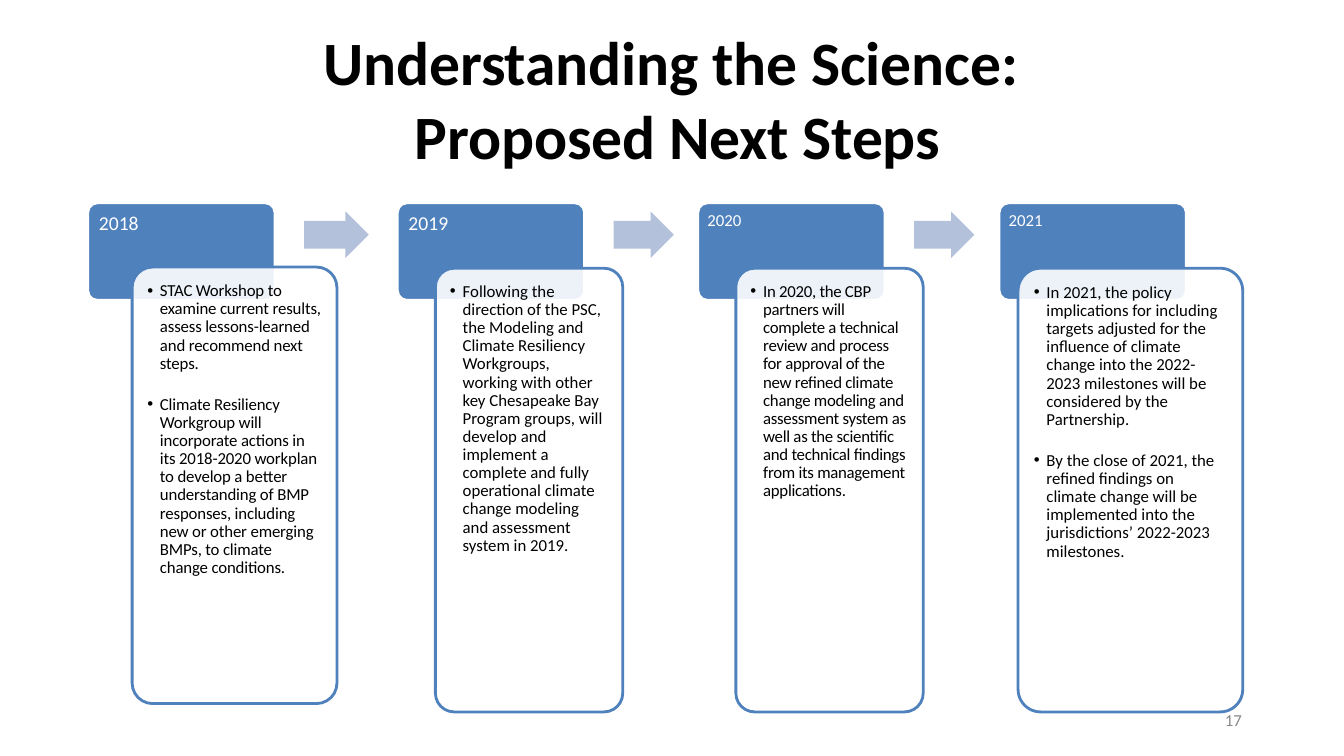
import pptx
import pptx.util
import pptx.dml.color
import pptx.enum.shapes
import pptx.enum.text
import pptx.oxml.ns
import lxml.etree

Cm, Pt = pptx.util.Cm, pptx.util.Pt
SHAPE = pptx.enum.shapes.MSO_SHAPE
ALIGN = pptx.enum.text.PP_ALIGN
ANCHOR = pptx.enum.text.MSO_ANCHOR
qn = pptx.oxml.ns.qn

FONT = "Calibri"
COLORS = {"blue": "4F81BD", "arrow": "B3C1DB", "white": "FFFFFF",
          "black": "000000", "grey": "888888"}

# Per step: year, year size, left, card offset, card top, card width,
# card height, arrow width (0 for none), letter spacing, bullets
STEPS = [
    ("2018", 14, 2.21, 1.12, 6.73, 5.16, 11, 1.63, -0.1, [
        "STAC Workshop to examine current results, assess lessons-learned "
        "and recommend next steps.",
        "Climate Resiliency Workgroup will incorporate actions in its "
        "2018-2020 workplan to develop a better understanding of BMP "
        "responses, including new or other emerging BMPs, to climate "
        "change conditions."]),
    ("2019", 14, 10.01, 0.96, 6.76, 4.72, 11.18, 1.52, 0, [
        "Following the direction of the PSC, the Modeling and Climate "
        "Resiliency Workgroups, working with other key Chesapeake Bay "
        "Program groups, will develop and implement a complete and fully "
        "operational climate change modeling and assessment system in 2019."]),
    ("2020", 12, 17.58, 0.96, 6.76, 4.72, 11.18, 1.52, -0.2, [
        "In 2020, the CBP partners will complete a technical review and "
        "process for approval of the new refined climate change modeling "
        "and assessment system as well as the scientific and technical "
        "findings from its management applications."]),
    ("2021", 12, 25.17, 0.48, 6.76, 5.66, 11.18, 0, 0, [
        "In 2021, the policy implications for including targets adjusted "
        "for the influence of climate change into the 2022-2023 milestones "
        "will be considered by the Partnership.",
        "By the close of 2021, the refined findings on climate change will "
        "be implemented into the jurisdictions’ 2022-2023 milestones."]),
]


def rgb(name):
    return pptx.dml.color.RGBColor.from_string(COLORS[name])


def format_runs(p, size, color, bold=False, spacing=0):
    for r in p.runs:
        r.font.name, r.font.size, r.font.bold = FONT, Pt(size), bold
        r.font.color.rgb = rgb(color)
        r._r.get_or_add_rPr().set("spc", str(round(spacing * 100)))


def set_frame(tf, left=0, top=0, right=0, bottom=0):
    tf.word_wrap = True
    tf.auto_size = pptx.enum.text.MSO_AUTO_SIZE.NONE
    tf.vertical_anchor = ANCHOR.TOP
    tf.margin_left, tf.margin_top = Cm(left), Cm(top)
    tf.margin_right, tf.margin_bottom = Cm(right), Cm(bottom)


def add_block(slide, kind, box, fill, line=None):
    sp = slide.shapes.add_shape(kind, *map(Cm, box))
    sp.shadow.inherit = False
    sp.fill.solid()
    sp.fill.fore_color.rgb = rgb(fill)
    if line:
        sp.line.color.rgb = rgb(line)
        sp.line.width = Pt(2)
    else:
        sp.line.fill.background()
    return sp


def add_title(slide, left, top, width, height):
    sp = slide.shapes.title
    sp.left, sp.top, sp.width, sp.height = map(Cm, (left, top, width, height))
    tf = sp.text_frame
    tf.text = "Understanding the Science: \vProposed Next Steps"
    set_frame(tf, top=0.03)
    p = tf.paragraphs[0]
    p.alignment = ALIGN.CENTER
    format_runs(p, 44, "black", bold=True, spacing=-0.1)


def add_year(slide, box, year, size):
    sp = add_block(slide, SHAPE.ROUNDED_RECTANGLE, box, "blue", "white")
    sp.adjustments[0] = 0.1
    tf = sp.text_frame
    tf.text = year
    inset = size / 50
    set_frame(tf, inset - 0.07, inset - 0.07, inset)
    p = tf.paragraphs[0]
    p.alignment, p.line_spacing = ALIGN.LEFT, 0.9
    format_runs(p, size, "white")


def add_card(slide, box, bullets, spacing):
    sp = add_block(slide, SHAPE.ROUNDED_RECTANGLE, box, "white", "blue")
    sp.adjustments[0] = 0.1
    # Let the year block show faintly through the card
    color = sp._element.spPr.find(qn("a:solidFill"))[0]
    lxml.etree.SubElement(color, qn("a:alpha"), val="90000")
    tf = sp.text_frame
    tf.text = "\n".join(bullets)
    set_frame(tf, 0.23, 0.23, 0.23, 0.23)
    for p in tf.paragraphs:
        p.alignment, p.line_spacing, p.space_after = ALIGN.LEFT, 0.9, Pt(16.3)
        pPr = p._p.get_or_add_pPr()
        pPr.set("marL", str(Cm(0.32)))
        pPr.set("indent", str(-Cm(0.32)))
        lxml.etree.SubElement(pPr, qn("a:buFont"), typeface="Arial")
        lxml.etree.SubElement(pPr, qn("a:buChar"), char="•")
        format_runs(p, 12, "black", spacing=spacing)


def add_arrow(slide, box):
    sp = add_block(slide, SHAPE.RIGHT_ARROW, box, "arrow")
    sp.adjustments[0], sp.adjustments[1] = 0.6, 0.5


def add_step(slide, top, step):
    (year, size, left, offset, card_top, card_width, card_height,
     arrow_width, spacing, bullets) = step
    add_year(slide, (left, top, 4.72, 2.46), year, size)
    add_card(slide, (left + offset, card_top, card_width, card_height),
             bullets, spacing)
    if arrow_width:
        add_arrow(slide, (left + 5.45, top + 0.22, arrow_width, 1.17))


def add_page_number(slide, left, top, width, height):
    sp = slide.shapes.add_textbox(*map(Cm, (left, top, width, height)))
    tf = sp.text_frame
    tf.text = "17"
    set_frame(tf, left=0.08)
    p = tf.paragraphs[0]
    p.line_spacing = Pt(12.4)
    format_runs(p, 12, "grey")


def main():
    prs = pptx.Presentation()
    prs.slide_width, prs.slide_height = Cm(33.86), Cm(19.05)
    slide = prs.slides.add_slide(prs.slide_layouts[5])
    add_page_number(slide, 30.78, 17.96, 0.7, 0.48)
    add_title(slide, 1.27, 0.58, 31.6, 3.81)
    for step in STEPS:
        add_step(slide, 5.11, step)
    prs.save("out.pptx")


if __name__ == "__main__":
    main()
